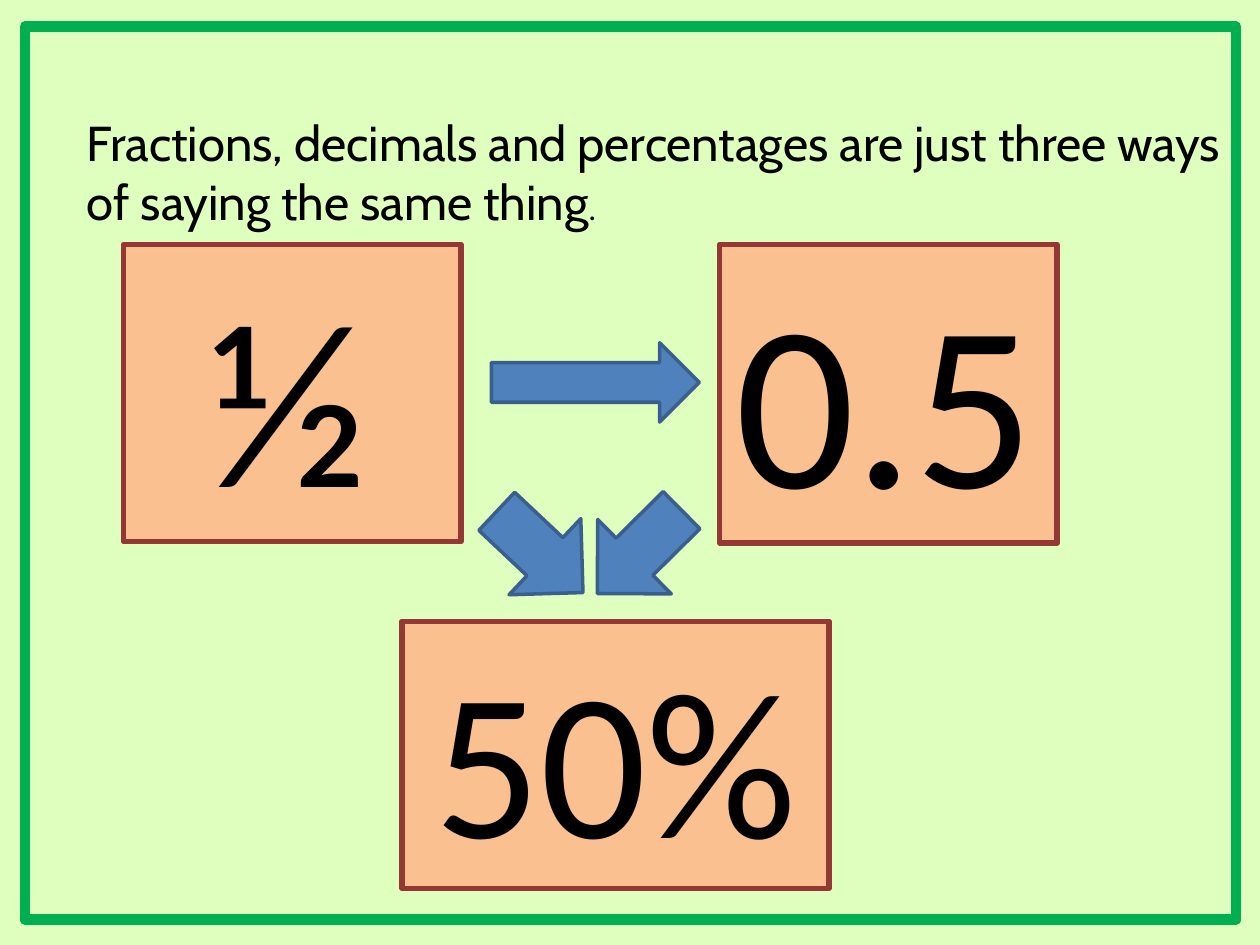
from pptx import Presentation
from pptx import util as u
from pptx.dml.color import RGBColor
from pptx.enum import shapes, text

PX = 9144  # 100 px to the inch
PALE = RGBColor(0xDF, 0xFF, 0xBF)
GREEN = RGBColor(0x00, 0xB0, 0x50)
PEACH = RGBColor(0xFA, 0xC0, 0x90)
RED = RGBColor(0x95, 0x37, 0x35)
BLUE = RGBColor(0x4F, 0x81, 0xBD)
NAVY = RGBColor(0x3A, 0x5F, 0x8C)
BLACK = RGBColor(0, 0, 0)
KIND = shapes.MSO_SHAPE

deck = Presentation()
deck.slide_width, deck.slide_height = 1000 * PX, 750 * PX
slide = deck.slides.add_slide(deck.slide_layouts[5])
slide.background.fill.solid()
slide.background.fill.fore_color.rgb = PALE


def draw(kind, box, fill, line, width):
    item = slide.shapes.add_shape(kind, *[n * PX for n in box])
    item.shadow.inherit = False
    if fill is None:
        item.fill.background()
    else:
        item.fill.solid()
        item.fill.fore_color.rgb = fill
    item.line.color.rgb = line
    item.line.width = u.Pt(width)
    return item


def style(run, size, face):
    run.font.size = u.Pt(size)
    run.font.name = face
    run.font.color.rgb = BLACK


# Title
title = slide.shapes.title
title.left, title.top, title.width, title.height = [n * PX for n in (59, 84, 941, 165)]
frame = title.text_frame
frame.text = "Fractions, decimals and percentages are just three ways of saying the same thing"
frame.word_wrap = True
frame.auto_size = text.MSO_AUTO_SIZE.NONE
frame.vertical_anchor = text.MSO_ANCHOR.TOP
para = frame.paragraphs[0]
para.alignment = text.PP_ALIGN.LEFT
para.add_run().text = "."
style(para.runs[0], 28, "Cabin")
style(para.runs[1], 18, "Calibri")

# Green border
draw(KIND.RECTANGLE, (20, 21, 961, 709), None, GREEN, 6)

# Three equal values; the space after each has its own size
cards = [
    ("½", 135, 18, (98, 194, 268, 236)),
    ("0.5", 135, 18, (571, 194, 268, 237)),
    ("50%", 120, 120, (319, 493, 339, 212)),
]
for value, size, gap, box in cards:
    card = draw(KIND.RECTANGLE, box, PEACH, RED, 3)
    frame = card.text_frame
    frame.text = value
    frame.word_wrap = True
    frame.vertical_anchor = text.MSO_ANCHOR.MIDDLE
    para = frame.paragraphs[0]
    para.alignment = text.PP_ALIGN.CENTER
    para.add_run().text = " "
    style(para.runs[0], size, "Calibri")
    style(para.runs[1], gap, "Calibri")

# Arrows between the cards
arrows = [
    ((441, 221, 63, 165), 270),
    ((466, 391, 83, 94), 45.3),
    ((387, 391, 83, 94), 313.3),
]
for box, turn in arrows:
    draw(KIND.DOWN_ARROW, box, BLUE, NAVY, 2).rotation = turn

deck.save("out.pptx")
